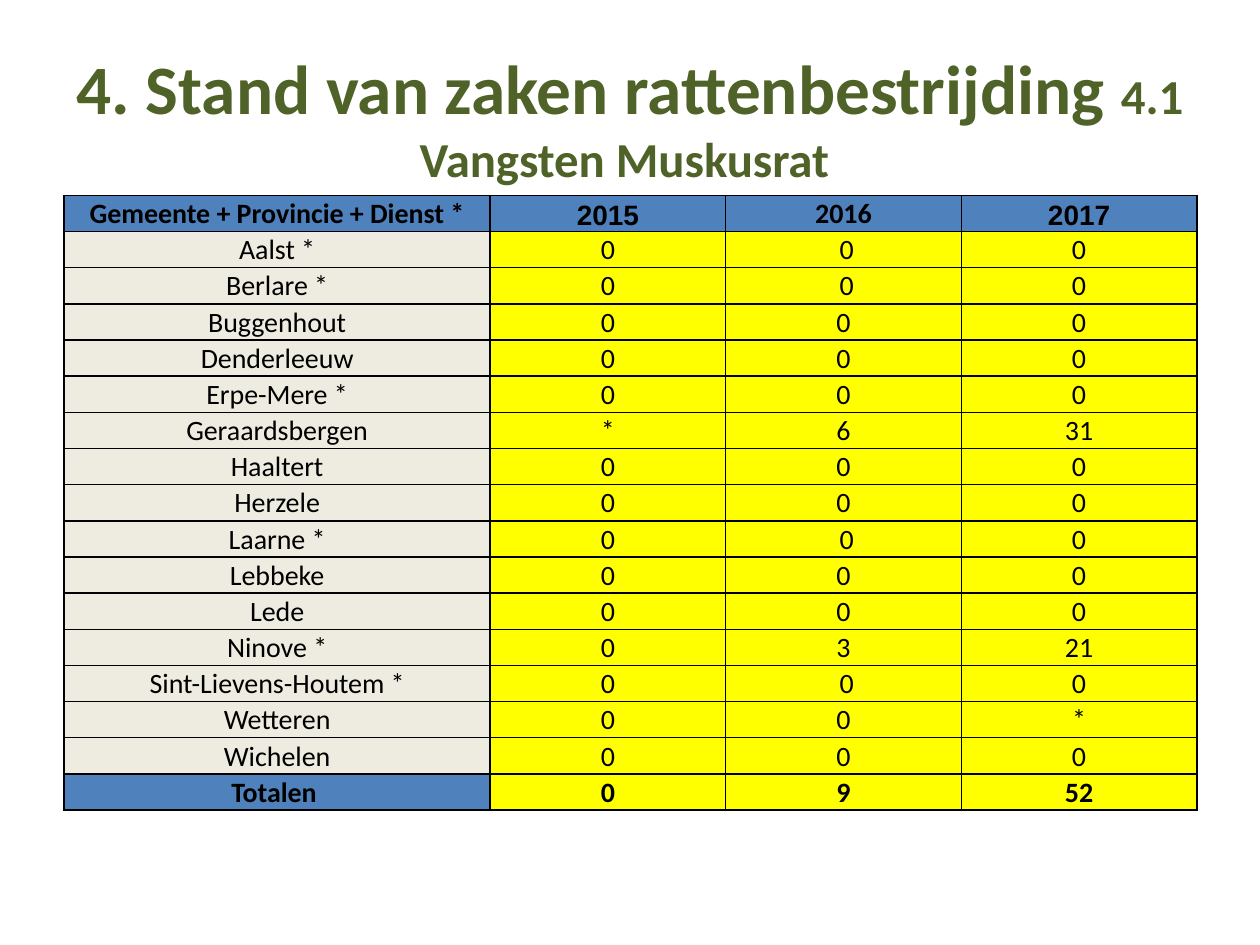
"""Build the slide with the yearly muskrat catches per municipality."""
from dataclasses import dataclass

from lxml import etree
from pptx import Presentation
from pptx.dml.color import RGBColor
from pptx.enum.text import MSO_ANCHOR, PP_ALIGN
from pptx.oxml.ns import qn
from pptx.util import Inches, Pt

CENTER = PP_ALIGN.CENTER
MIDDLE, BOTTOM = MSO_ANCHOR.MIDDLE, MSO_ANCHOR.BOTTOM
BLACK = RGBColor(0x00, 0x00, 0x00)
GREEN = RGBColor(0x4F, 0x62, 0x28)
BLUE = RGBColor(0x4F, 0x81, 0xBD)
BEIGE = RGBColor(0xEE, 0xEC, 0xE1)
YELLOW = RGBColor(0xFF, 0xFF, 0x00)

COL_WIDTHS = (3.38, 1.87, 1.87, 1.87)
ROW_HEIGHT = 4.88 / 17
MARGINS = {"margin_left": 0.01, "margin_right": 0.01, "margin_top": 0.01, "margin_bottom": 0}


@dataclass
class Row:
    values: tuple[str, ...]
    label_fill: RGBColor = BEIGE
    value_fill: RGBColor = YELLOW
    anchor: MSO_ANCHOR = MIDDLE
    bold: bool = False
    fonts: tuple[str, ...] = ("Calibri",) * 4


ROWS = [
    Row(("Gemeente + Provincie + Dienst *", "2015", "2016", "2017"), BLUE, BLUE, BOTTOM, True,
        ("Calibri", "Arial", "Calibri", "Arial")),
    Row(("Aalst *", "0", " 0", "0")),
    Row(("Berlare *", "0", " 0", "0")),
    Row(("Buggenhout", "0", "0", "0")),
    Row(("Denderleeuw", "0", "0", "0")),
    Row(("Erpe-Mere *", "0", "0", "0")),
    Row(("Geraardsbergen", "*", "6", "31")),
    Row(("Haaltert", "0", "0", "0")),
    Row(("Herzele", "0", "0", "0")),
    Row(("Laarne *", "0", " 0", "0")),
    Row(("Lebbeke", "0", "0", "0")),
    Row(("Lede", "0", "0", "0")),
    Row(("Ninove *", "0", "3", "21")),
    Row(("Sint-Lievens-Houtem *", "0", " 0", "0")),
    Row(("Wetteren", "0", "0", "*")),
    Row(("Wichelen", "0", "0", "0")),
    Row(("Totalen ", "0", "9", "52"), BLUE, YELLOW, BOTTOM, True),
]


def add_run(p, text: str, size: float, color: RGBColor, bold: bool, name: str = "Calibri") -> None:
    r = p.add_run()
    r.text = text
    for key, value in {"size": Pt(size), "bold": bold, "name": name}.items():
        setattr(r.font, key, value)
    r.font.color.rgb = color


def add_borders(cell) -> None:
    tc_pr = cell._tc.get_or_add_tcPr()
    for i, side in enumerate(("lnL", "lnR", "lnT", "lnB")):
        ln = etree.Element(qn(f"a:{side}"), w=str(Pt(1)))
        fill = etree.SubElement(ln, qn("a:solidFill"))
        etree.SubElement(fill, qn("a:srgbClr"), val=str(BLACK))
        tc_pr.insert(i, ln)


def fill_cell(cell, row: Row, col: int) -> None:
    for key, value in MARGINS.items():
        setattr(cell, key, Inches(value))
    cell.vertical_anchor = row.anchor
    cell.fill.solid()
    cell.fill.fore_color.rgb = row.value_fill if col else row.label_fill
    p = cell.text_frame.paragraphs[0]
    p.alignment = CENTER
    add_run(p, row.values[col], 16, BLACK, row.bold, row.fonts[col])
    add_borders(cell)


def add_title(s) -> None:
    sp = s.shapes.title
    sp.left, sp.top, sp.width, sp.height = map(Inches, (0.5, 0.3, 9, 1.25))
    tf = sp.text_frame
    tf.word_wrap = True
    tf.vertical_anchor = MIDDLE
    p = tf.paragraphs[0]
    p.alignment = CENTER
    add_run(p, "4. Stand van zaken rattenbestrijding ", 39.6, GREEN, True)
    add_run(p, "4.1 Vangsten Muskusrat ", 27.9, GREEN, True)


def add_catches(s) -> None:
    box = map(Inches, (0.51, 1.55, sum(COL_WIDTHS), ROW_HEIGHT * len(ROWS)))
    table = s.shapes.add_table(len(ROWS), len(COL_WIDTHS), *box).table
    table.horz_banding = False
    for column, width in zip(table.columns, COL_WIDTHS):
        column.width = Inches(width)
    for i, row in enumerate(ROWS):
        table.rows[i].height = Inches(ROW_HEIGHT)
        for col in range(len(COL_WIDTHS)):
            fill_cell(table.cell(i, col), row, col)


def main() -> None:
    prs = Presentation()
    prs.slide_width, prs.slide_height = Inches(10), Inches(7.5)
    s = prs.slides.add_slide(prs.slide_layouts[5])
    add_title(s)
    add_catches(s)
    prs.save("out.pptx")


if __name__ == "__main__":
    main()
